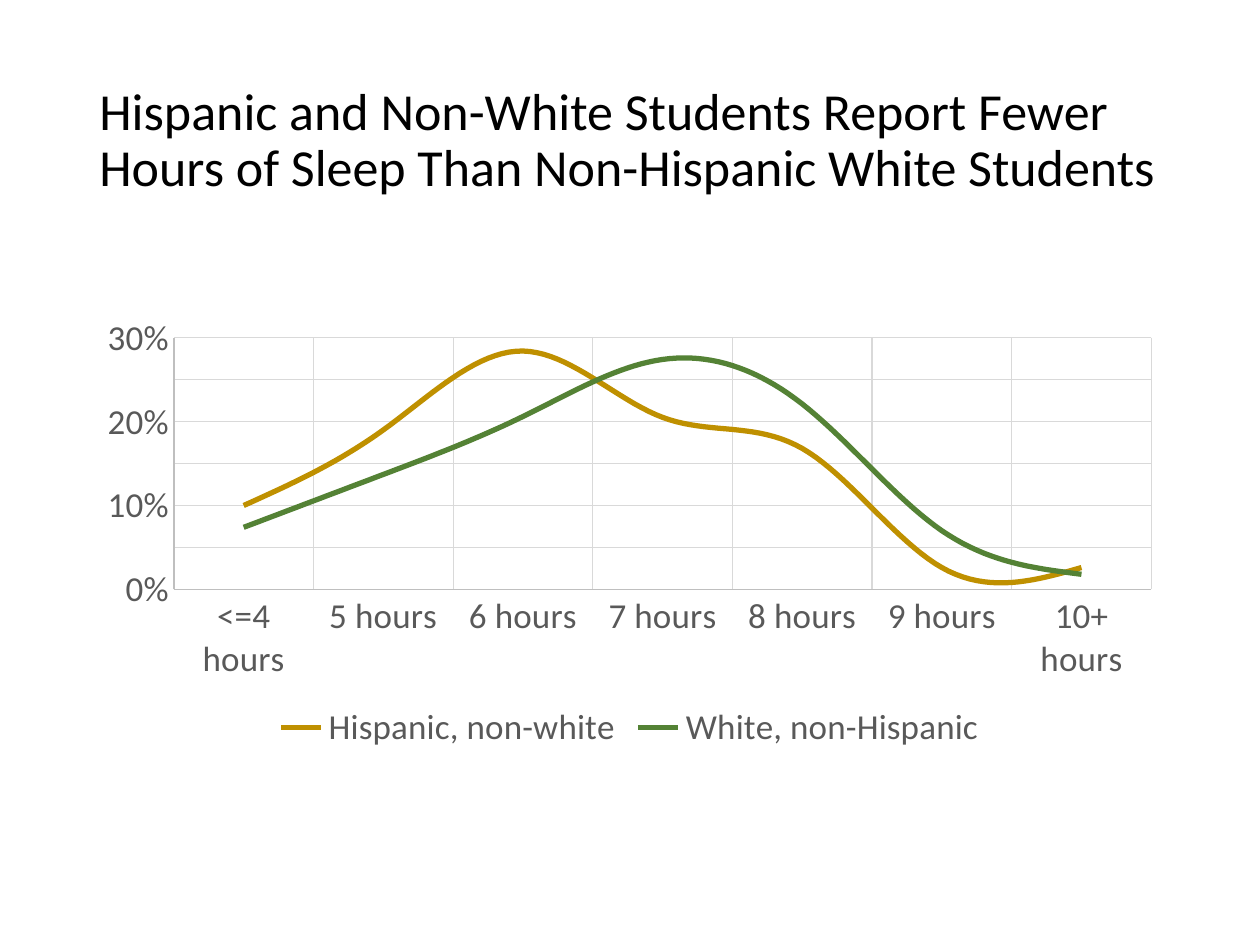
from dataclasses import dataclass

from lxml.etree import SubElement
from pptx import Presentation
from pptx.chart.data import CategoryChartData
from pptx.dml.color import RGBColor
from pptx.enum.chart import XL_CHART_TYPE, XL_LEGEND_POSITION, XL_TICK_MARK
from pptx.enum.text import MSO_ANCHOR
from pptx.oxml.ns import qn
from pptx.util import Inches, Pt


@dataclass(frozen=True)
class Theme:
    font: str = "Calibri"
    title_size: float = 29.7
    chart_size: float = 20
    title_color: str = "000000"
    label_color: str = "595959"
    axis_color: str = "BFBFBF"
    grid_color: str = "D9D9D9"
    series_colors: tuple = ("BF9000", "548235")
    thin_line: float = 0.75
    series_line: float = 3


class SlideBuilder:
    """Adds styled elements to the current slide."""

    def __init__(self, page, theme):
        self.page = page
        self.theme = theme

    def style_font(self, font, size, color):
        font.name = self.theme.font
        font.size = Pt(size)
        font.color.rgb = RGBColor.from_string(color)

    def style_line(self, line, color, width):
        line.color.rgb = RGBColor.from_string(color)
        line.width = Pt(width)

    def add_title(self, text, left, top, width, height):
        box = self.page.shapes.add_textbox(
            Inches(left), Inches(top), Inches(width), Inches(height))
        frame = box.text_frame
        frame.word_wrap = True
        frame.vertical_anchor = MSO_ANCHOR.MIDDLE
        frame.text = text
        paragraph = frame.paragraphs[0]
        paragraph.line_spacing = 0.9
        self.style_font(paragraph.runs[0].font,
                        self.theme.title_size, self.theme.title_color)

    def add_line_chart(self, categories, series_values, left, top, width, height):
        data = CategoryChartData(number_format="0%")
        data.categories = categories
        for name, values in series_values.items():
            data.add_series(name, values)
        chart = self.page.shapes.add_chart(
            XL_CHART_TYPE.LINE, Inches(left), Inches(top),
            Inches(width), Inches(height), data).chart
        chart.has_title = False
        self.style_font(chart.font, self.theme.chart_size, self.theme.label_color)
        for series, color in zip(chart.plots[0].series, self.theme.series_colors):
            series.smooth = True
            self.style_line(series.format.line, color, self.theme.series_line)
        self.style_axes(chart)
        self.place_plot(chart, x=0.08, y=0.07, w=0.9, h=0.56)
        chart.has_legend = True
        chart.legend.position = XL_LEGEND_POSITION.BOTTOM
        chart.legend.include_in_layout = False
        self.style_font(chart.legend.font,
                        self.theme.chart_size, self.theme.label_color)

    def style_axes(self, chart):
        theme = self.theme
        for axis in (chart.category_axis, chart.value_axis):
            axis.major_tick_mark = axis.minor_tick_mark = XL_TICK_MARK.NONE
            axis.has_major_gridlines = True
            self.style_line(axis.major_gridlines.format.line,
                            theme.grid_color, theme.thin_line)
            self.style_line(axis.format.line, theme.axis_color, theme.thin_line)
            self.style_font(axis.tick_labels.font,
                            theme.chart_size, theme.label_color)
        scale = chart.value_axis
        scale.minimum_scale, scale.maximum_scale = 0, 0.3
        scale.major_unit = 0.05
        scale.tick_labels.number_format = "0%"
        scale.tick_labels.number_format_is_linked = False

    def place_plot(self, chart, **fractions):
        plot_area = chart.plots[0]._element.getparent()
        layout = plot_area.find(qn("c:layout"))
        if layout is None:
            layout = SubElement(plot_area, qn("c:layout"))
            plot_area.insert(0, layout)
        manual = SubElement(layout, qn("c:manualLayout"))
        settings = {"layoutTarget": "inner", "xMode": "edge", "yMode": "edge",
                    **fractions}
        for tag, value in settings.items():
            SubElement(manual, qn(f"c:{tag}")).set("val", str(value))


def main():
    deck = Presentation()
    deck.slide_width, deck.slide_height = Inches(10), Inches(7.5)
    page = deck.slides.add_slide(deck.slide_layouts[6])
    builder = SlideBuilder(page, Theme())
    builder.add_title(
        "Hispanic and Non-White Students Report Fewer Hours of Sleep "
        "Than Non-Hispanic White Students", 0.69, 0.4, 8.62, 1.45)
    categories = ["<=4 hours", *(f"{hours} hours" for hours in range(5, 10)),
                  "10+ hours"]
    sleep_shares = {
        "Hispanic, non-white": (0.1, 0.19, 0.284, 0.205, 0.168, 0.026, 0.026),
        "White, non-Hispanic": (0.074, 0.137, 0.206, 0.274, 0.221, 0.07, 0.018),
    }
    builder.add_line_chart(categories, sleep_shares, 0.69, 2.43, 8.62, 3.57)
    deck.save("out.pptx")


if __name__ == "__main__":
    main()
